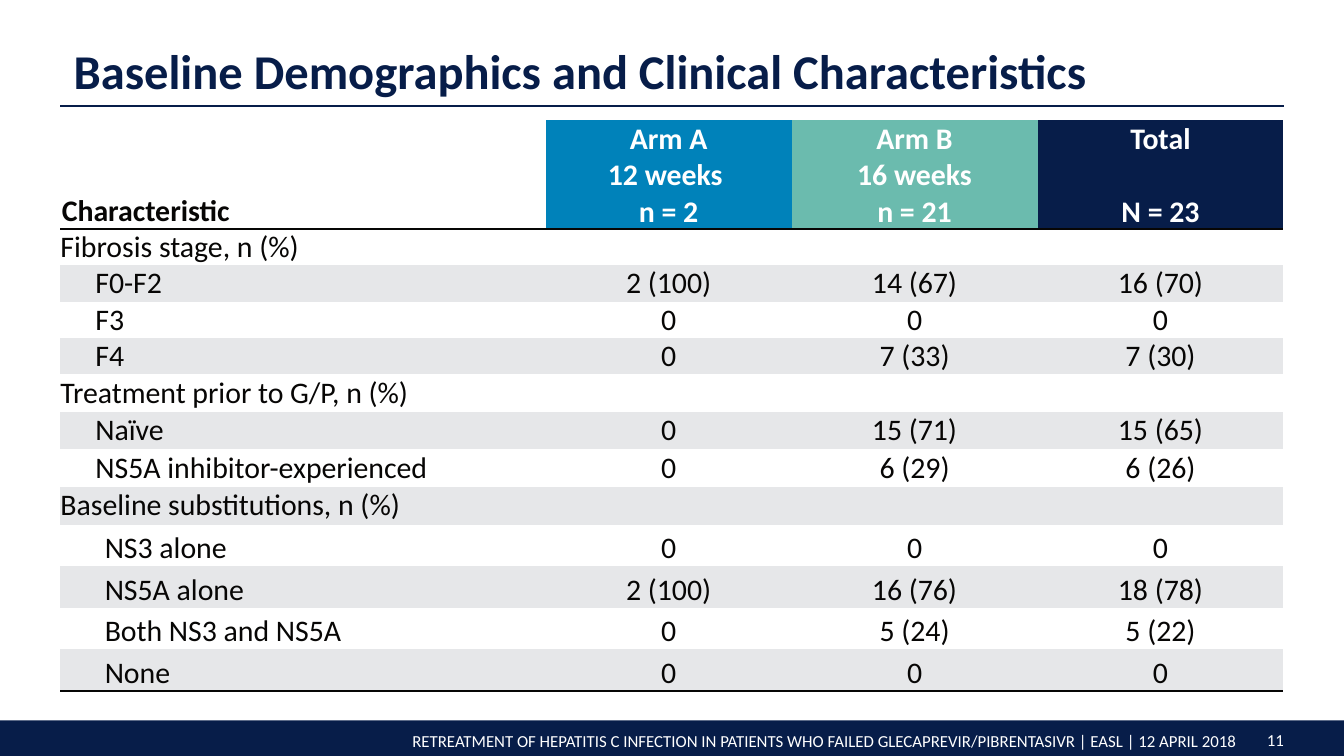
from lxml import etree
from pptx import Presentation
from pptx import util as u
from pptx.dml.color import RGBColor
from pptx.enum import shapes, text
from pptx.oxml import ns

NAVY, BLUE, TEAL = "071D49", "0082BA", "6BBBAE"
WHITE, GREY, BLACK = "FFFFFF", "E6E7E9", "070605"
LEFT, CENTER, RIGHT = text.PP_ALIGN.LEFT, text.PP_ALIGN.CENTER, text.PP_ALIGN.RIGHT
TOP, MIDDLE, BOTTOM = text.MSO_ANCHOR.TOP, text.MSO_ANCHOR.MIDDLE, text.MSO_ANCHOR.BOTTOM
NO_STYLE_NO_GRID = "{2D5ABB26-0587-4C30-8999-92F81FD0307C}"


def color(value):
    return RGBColor.from_string(value)


def write(paragraph, words, size, ink, bold=False, align=LEFT, spacing=None):
    paragraph.alignment = align
    paragraph.line_spacing = spacing
    run = paragraph.add_run()
    run.text = words
    run.font.name = "Calibri"
    run.font.size = u.Pt(size)
    run.font.bold = bold
    run.font.color.rgb = color(ink)


presentation = Presentation()
presentation.slide_width = u.Inches(10)
presentation.slide_height = u.Inches(10) * 9 // 16
slide = presentation.slides.add_slide(presentation.slide_layouts[6])

# Footer band and title rule
band = slide.shapes.add_shape(
    shapes.MSO_SHAPE.RECTANGLE, u.Inches(0), u.Inches(5.36), u.Inches(10), u.Inches(0.27))
band.shadow.inherit = False
band.fill.solid()
band.fill.fore_color.rgb = color(NAVY)
band.line.fill.background()

rule = slide.shapes.add_connector(
    shapes.MSO_CONNECTOR.STRAIGHT, u.Inches(0.45), u.Inches(0.79), u.Inches(9.55), u.Inches(0.79))
rule.line.color.rgb = color(NAVY)
rule.line.width = u.Pt(0.75)
etree.SubElement(rule.element.spPr, ns.qn("a:effectLst"))

# Footer, slide number and title
footer = ("RETREATMENT OF HEPATITIS C INFECTION IN PATIENTS WHO FAILED "
          "GLECAPREVIR/PIBRENTASIVR | EASL | 12 APRIL 2018")
text_boxes = [
    (-0.35, 5.39, 9.64, 0.25, footer, 9, WHITE, False, RIGHT, None, TOP),
    (9.3, 5.4, 0.38, 0.24, "11", 9, WHITE, False, CENTER, 0.9, TOP),
    (0.45, 0.21, 9.1, 0.58, "Baseline Demographics and Clinical Characteristics",
     26, NAVY, True, LEFT, 0.9, BOTTOM),
]
for left, top, width, height, words, size, ink, bold, align, spacing, anchor in text_boxes:
    box = slide.shapes.add_textbox(
        u.Inches(left), u.Inches(top), u.Inches(width), u.Inches(height))
    box.text_frame.word_wrap = True
    box.text_frame.vertical_anchor = anchor
    write(box.text_frame.paragraphs[0], words, size, ink, bold, align, spacing)

# Characteristics table
headers = [
    (WHITE, ["Characteristic"]),
    (BLUE, ["Arm A", "12 weeks ", "n = 2"]),
    (TEAL, ["Arm B", "16 weeks", "n = 21"]),
    (NAVY, ["Total", "N = 23"]),
]
body = [
    ["Fibrosis stage, n (%)"],
    ["F0-F2", "2 (100)", "14 (67)", "16 (70)"],
    ["F3", "0", "0", "0"],
    ["F4", "0", "7 (33)", "7 (30)"],
    ["Treatment prior to G/P, n (%)"],
    ["Naïve", "0", "15 (71)", "15 (65)"],
    ["NS5A inhibitor-experienced", "0", "6 (29)", "6 (26)"],
    ["Baseline substitutions, n (%)"],
    ["NS3 alone", "0", "0", "0"],
    ["NS5A alone", "2 (100)", "16 (76)", "18 (78)"],
    ["Both NS3 and NS5A", "0", "5 (24)", "5 (22)"],
    ["None", "0", "0", "0"],
]
first_loose_row = 9
last_body_row = len(body)
row_heights = [0.8] + [0.27] * 4 + [0.28] * 4 + [0.31] * 4 + [0.16]

frame = slide.shapes.add_table(
    len(row_heights), 4, u.Inches(0.45), u.Inches(0.89), u.Inches(9.1), u.Inches(4.39))
table = frame.table
table.first_row = table.horz_banding = False
next(frame.element.iter(ns.qn("a:tableStyleId"))).text = NO_STYLE_NO_GRID
for column, width in zip(table.columns, [3.61, 1.83, 1.83, 1.83]):
    column.width = u.Inches(width)
for row, height in zip(table.rows, row_heights):
    row.height = u.Inches(height)

for column, (fill, lines) in enumerate(headers):
    cell = table.cell(0, column)
    cell.fill.solid()
    cell.fill.fore_color.rgb = color(fill)
    cell.vertical_anchor = MIDDLE if column else BOTTOM
    cell.margin_left = cell.margin_right = cell.margin_top = u.Inches(0.01)
    cell.margin_bottom = 0
    for number, line in enumerate(lines):
        paragraph = cell.text_frame.add_paragraph() if number else cell.text_frame.paragraphs[0]
        write(paragraph, line, 16, WHITE if column else BLACK, True, CENTER if column else LEFT)
    if len(lines) == 2:
        paragraph.space_before = u.Pt(19.5)

for row, values in enumerate(body, start=1):
    loose = row >= first_loose_row
    for column in range(4):
        cell = table.cell(row, column)
        cell.fill.solid()
        cell.fill.fore_color.rgb = color(WHITE if row % 2 else GREY)
        cell.vertical_anchor = TOP if loose and column == 0 else MIDDLE
        cell.margin_left = u.Inches(0.07 if column or loose else 0)
        cell.margin_right = u.Inches(0.07)
        cell.margin_top = cell.margin_bottom = 0
        paragraph = cell.text_frame.paragraphs[0]
        if column < len(values):
            write(paragraph, values[column], 16, BLACK, False,
                  CENTER if column else LEFT, 1.15 if loose else None)
            if column == 0 and len(values) > 1:
                paragraph._p.get_or_add_pPr().set("marL", str(u.Inches(0.26)))
        else:
            etree.SubElement(paragraph._p, ns.qn("a:endParaRPr"), sz="1600")

# Closing row, empty and merged
closing_row = last_body_row + 1
table.cell(closing_row, 0).merge(table.cell(closing_row, 3))
for column in range(4):
    cell = table.cell(closing_row, column)
    cell.fill.background()
    cell.margin_top = cell.margin_bottom = 0
    etree.SubElement(cell.text_frame.paragraphs[0]._p, ns.qn("a:endParaRPr"), sz="800")

# Rules under the header and under the last body row
for row in (0, last_body_row):
    for column in range(4):
        border = etree.Element(ns.qn("a:lnB"), w=str(u.Pt(1)))
        fill = etree.SubElement(border, ns.qn("a:solidFill"))
        etree.SubElement(fill, ns.qn("a:srgbClr"), val=BLACK)
        table.cell(row, column)._tc.get_or_add_tcPr().insert(0, border)

presentation.save("out.pptx")
